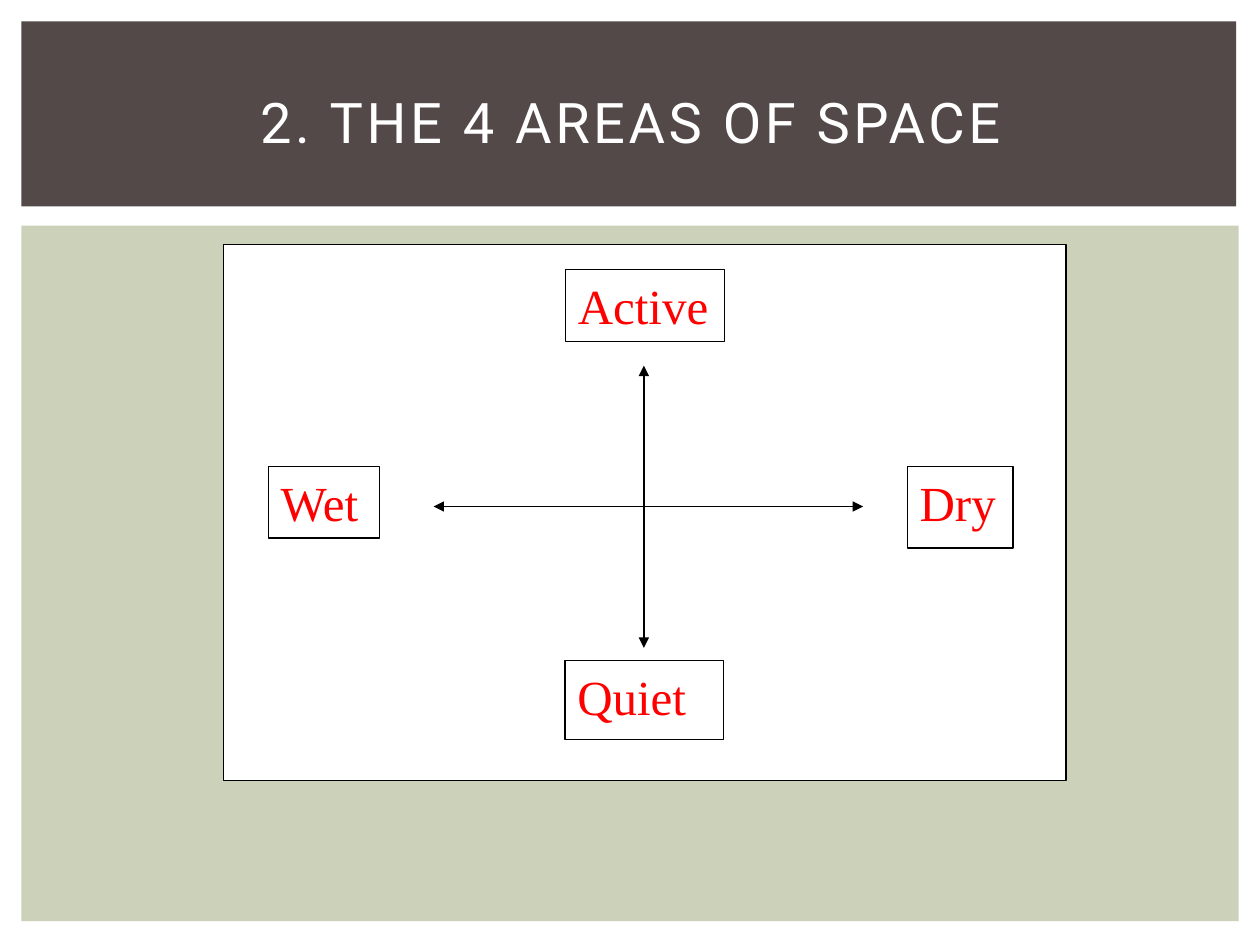
from lxml import etree
from pptx import Presentation
from pptx.dml.color import RGBColor
from pptx.enum.shapes import MSO_CONNECTOR as CONN, MSO_SHAPE as SHAPE
from pptx.enum.text import MSO_ANCHOR as ANCHOR, PP_ALIGN as ALIGN
from pptx.oxml.ns import qn
from pptx.util import Cm, Pt


def rgb(hex_color):
    return RGBColor.from_string(hex_color)


def add_rect(x, y, w, h, fill, line=None):
    sp = s.shapes.add_shape(SHAPE.RECTANGLE, Cm(x), Cm(y), Cm(w), Cm(h))
    sp.shadow.inherit = False
    sp.fill.solid()
    sp.fill.fore_color.rgb = rgb(fill)
    if line:
        sp.line.color.rgb = rgb(line)
        sp.line.width = Pt(0.75)
    else:
        sp.line.fill.background()
    return sp


prs = Presentation()
prs.slide_width, prs.slide_height = Cm(25.4), Cm(19.05)
s = prs.slides.add_slide(prs.slide_layouts[5])

# Background panel and title band
add_rect(0.43, 4.55, 24.54, 14.02, "CCD1B9")
add_rect(0.43, 0.43, 24.49, 3.73, "534949")

# Title, brought in front of the band
title = s.shapes.title
title.left, title.top, title.width, title.height = Cm(1.07), Cm(0.99), Cm(23.29), Cm(2.92)
s.shapes._spTree.append(title._element)
tf = title.text_frame
tf.word_wrap = True
tf.vertical_anchor = ANCHOR.MIDDLE
p = tf.paragraphs[0]
p.alignment = ALIGN.CENTER
r = p.add_run()
r.text = "2. THE 4 AREAS OF SPACE"
r.font.name, r.font.size = "Roboto", Pt(32)
r.font.color.rgb = rgb("FFFFFF")
r._r.get_or_add_rPr().set("spc", "200")

# Diagram frame
add_rect(4.5, 4.93, 16.99, 10.8, "FFFFFF", "000000")

# Crossed axes with arrowheads at both ends
for x1, y1, x2, y2 in [(12.98, 7.37, 12.98, 13.06), (8.74, 10.21, 17.4, 10.21)]:
    axis = s.shapes.add_connector(CONN.STRAIGHT, Cm(x1), Cm(y1), Cm(x2), Cm(y2))
    axis.line.color.rgb = rgb("000000")
    axis.line.width = Pt(0.75)
    ln = axis.line._get_or_add_ln()
    for end in ("a:headEnd", "a:tailEnd"):
        etree.SubElement(ln, qn(end), type="triangle")
    etree.SubElement(axis._element.spPr, qn("a:effectLst"))

# Labels at the ends of the axes
for text, x, y, w, h in [
    ("Active", 11.4, 5.43, 3.2, 1.45),
    ("Wet", 5.41, 9.4, 2.24, 1.45),
    ("Dry", 18.29, 9.4, 2.13, 1.65),
    ("Quiet", 11.39, 13.31, 3.2, 1.6),
]:
    sp = add_rect(x, y, w, h, "FFFFFF", "000000")
    tf = sp.text_frame
    tf.word_wrap = True
    tf.vertical_anchor = ANCHOR.TOP
    p = tf.paragraphs[0]
    p.alignment = ALIGN.LEFT
    r = p.add_run()
    r.text = text
    r.font.name, r.font.size = "Times New Roman", Pt(28)
    r.font.color.rgb = rgb("FF0000")

prs.save("out.pptx")
